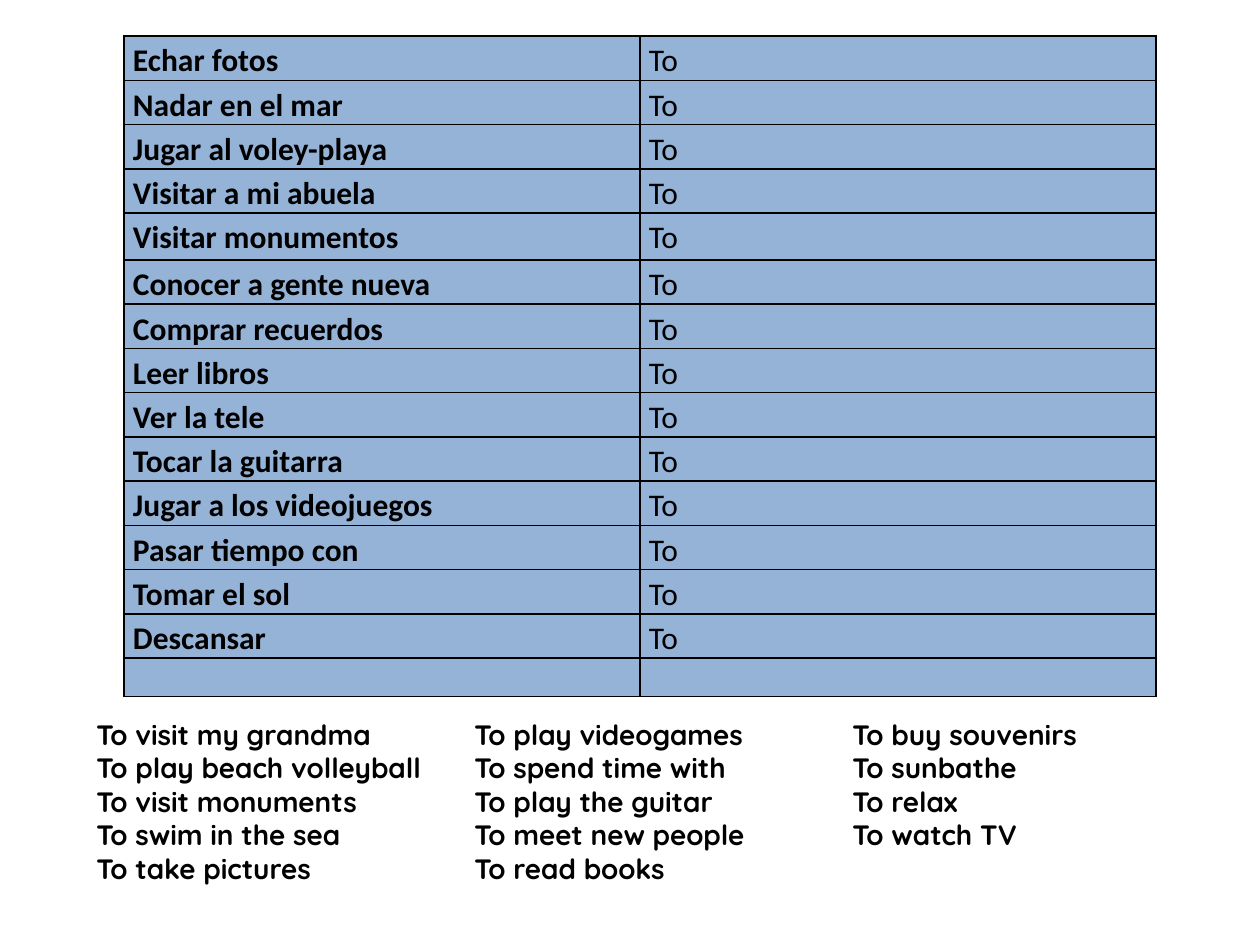
from lxml import etree
from pptx import Presentation
from pptx import util as u
from pptx.dml.color import RGBColor
from pptx.enum import text
from pptx.oxml import ns

PX = u.Inches(1) // 126

ACTIVITIES = [
    "Echar fotos", "Nadar en el mar", "Jugar al voley-playa",
    "Visitar a mi abuela", "Visitar monumentos", "Conocer a gente nueva",
    "Comprar recuerdos", "Leer libros", "Ver la tele", "Tocar la guitarra",
    "Jugar a los videojuegos", "Pasar tiempo con", "Tomar el sol", "Descansar",
]
WORD_BANK = [
    ["To visit my grandma", "To play videogames", "To buy souvenirs"],
    ["To play beach volleyball", "To spend time with", "To sunbathe"],
    ["To visit monuments", "To play the guitar", "To relax"],
    ["To swim in the sea", "To meet new people", "To watch TV"],
    ["To take pictures", "To read books"],
]


def px(length):
    return u.Emu(length * PX)


def color(value):
    return RGBColor.from_string(value)


class Sheet:
    """Worksheet style and the slide being filled."""

    INK = "000000"
    CELL_FILL = "95B3D7"
    TABLE_FONT = "Calibri"
    BANK_FONT = "Quicksand"

    def __init__(self, slide):
        self.slide = slide

    def span(self, para, words, font, size, bold):
        run = para.add_run()
        run.text = words
        run.font.name = font
        run.font.size = u.Pt(size)
        run.font.bold = bold
        run.font.color.rgb = color(self.INK)

    def borders(self, cell):
        props = cell._tc.get_or_add_tcPr()
        for place, side in enumerate(("lnL", "lnR", "lnT", "lnB")):
            line = etree.Element(ns.qn(f"a:{side}"), w=str(u.Pt(1)))
            fill = etree.SubElement(line, ns.qn("a:solidFill"))
            etree.SubElement(fill, ns.qn("a:srgbClr"), val=self.INK)
            props.insert(place, line)

    def cell(self, cell, words, bold):
        cell.margin_left = cell.margin_right = px(9)
        cell.margin_top = cell.margin_bottom = 0
        cell.fill.solid()
        cell.fill.fore_color.rgb = color(self.CELL_FILL)
        self.borders(cell)
        if words:
            para = cell.text_frame.paragraphs[0]
            para.line_spacing = 1.15
            self.span(para, words, self.TABLE_FONT, 18, bold)

    def table(self, left, top, column_width, heights, rows):
        columns = len(rows[0])
        frame = self.slide.shapes.add_table(
            len(rows), columns, px(left), px(top),
            px(column_width * columns), px(sum(heights)))
        table = frame.table
        for column in table.columns:
            column.width = px(column_width)
        for row, height, entries in zip(table.rows, heights, rows):
            row.height = px(height)
            for index, words in enumerate(entries):
                self.cell(row.cells[index], words, bold=index == 0)

    def tab_stops(self, para, stops):
        tabs = etree.SubElement(para._p.get_or_add_pPr(), ns.qn("a:tabLst"))
        for stop in stops:
            etree.SubElement(tabs, ns.qn("a:tab"), pos=str(px(stop)), algn="l")

    def word_bank(self, left, top, width, height, stops, lines):
        box = self.slide.shapes.add_textbox(
            px(left), px(top), px(width), px(height))
        frame = box.text_frame
        frame.word_wrap = True
        frame.auto_size = text.MSO_AUTO_SIZE.SHAPE_TO_FIT_TEXT
        for index, phrases in enumerate(lines):
            para = frame.add_paragraph() if index else frame.paragraphs[0]
            self.tab_stops(para, stops)
            self.span(para, "\t".join(phrases), self.BANK_FONT, 16, True)


def main():
    deck = Presentation()
    deck.slide_width, deck.slide_height = px(1260), px(945)
    sheet = Sheet(deck.slides.add_slide(deck.slide_layouts[6]))

    rows = [(activity, "To") for activity in ACTIVITIES] + [("", "")]
    heights = [47 if words == "Visitar monumentos" else 38 for words, _ in rows]
    sheet.table(124, 36, 516, heights, rows)
    sheet.word_bank(84, 711, 1111, 183, (378, 756), WORD_BANK)

    deck.save("out.pptx")


if __name__ == "__main__":
    main()
